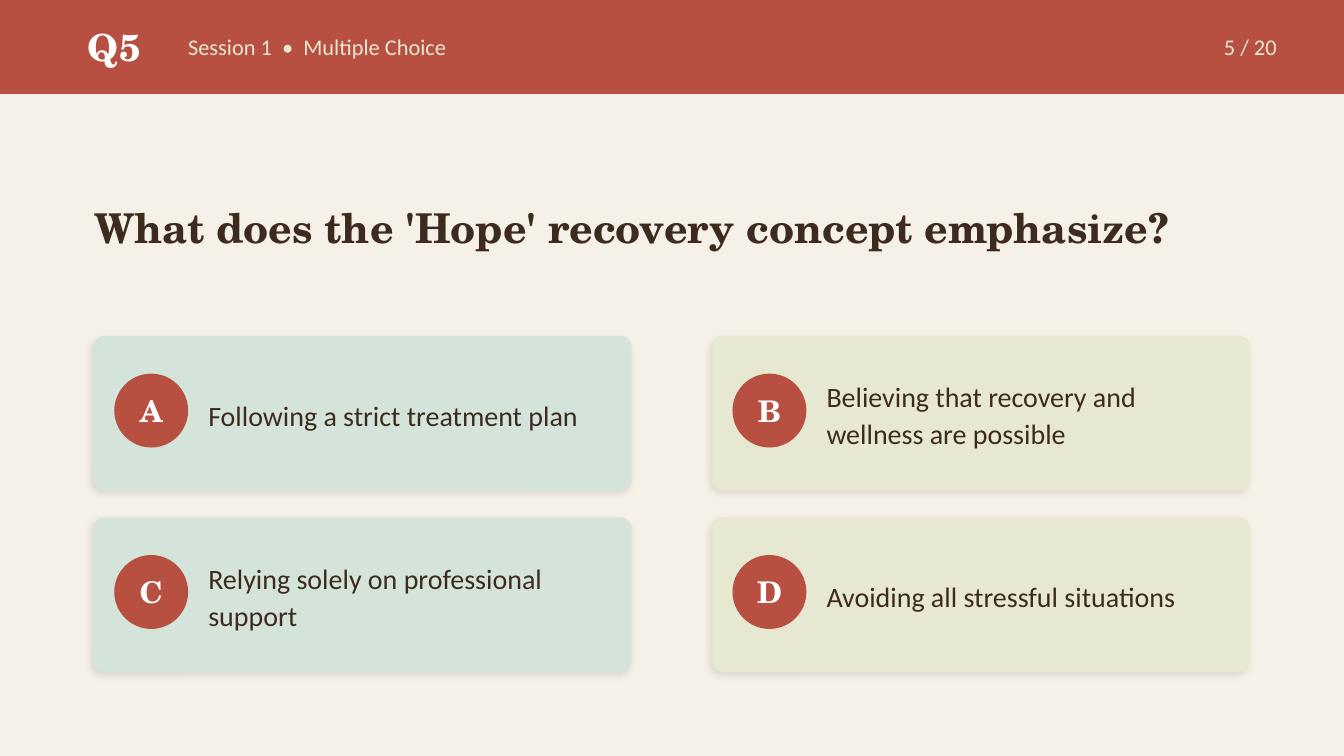
from lxml.etree import SubElement
from pptx import Presentation
from pptx.dml.color import RGBColor
from pptx.enum.shapes import MSO_SHAPE
from pptx.enum.text import MSO_ANCHOR, MSO_AUTO_SIZE, PP_ALIGN
from pptx.oxml.ns import qn
from pptx.util import Pt

SERIF, SANS = "TeX Gyre Schola", "Calibri"
CREAM, RED, BROWN, WHITE = "F5F0E8", "B85042", "3D2B1F", "FFFFFF"
MINT, SAND = "D4E4DA", "E7E8D1"

ANSWERS = [
    "Following a strict treatment plan",
    "Believing that recovery and wellness are possible",
    "Relying solely on professional support",
    "Avoiding all stressful situations",
]


def rgb(value):
    return RGBColor.from_string(value)


def write(sp, text, size=15, font=SANS, color=BROWN, bold=False,
          align=PP_ALIGN.LEFT, spacing=1.0):
    tf = sp.text_frame
    tf.word_wrap = True
    tf.auto_size = MSO_AUTO_SIZE.NONE
    tf.vertical_anchor = MSO_ANCHOR.MIDDLE
    tf.margin_left = tf.margin_top = tf.margin_right = tf.margin_bottom = 0
    p = tf.paragraphs[0]
    p.alignment = align
    p.line_spacing = spacing
    r = p.add_run()
    r.text = text
    r.font.size = Pt(size)
    r.font.name = font
    r.font.bold = bold
    r.font.color.rgb = rgb(color)


def add_text(slide, x, y, w, h, text, **fmt):
    sp = slide.shapes.add_textbox(Pt(x), Pt(y), Pt(w), Pt(h))
    write(sp, text, **fmt)


def add_block(slide, kind, x, y, w, h, fill):
    sp = slide.shapes.add_shape(kind, Pt(x), Pt(y), Pt(w), Pt(h))
    sp.shadow.inherit = False
    sp.fill.solid()
    sp.fill.fore_color.rgb = rgb(fill)
    sp.line.fill.background()
    return sp


def add_soft_shadow(sp):
    effects = sp._element.spPr.find(qn("a:effectLst"))
    shadow = SubElement(effects, qn("a:outerShdw"), blurRad=str(Pt(4)),
                        dist=str(Pt(2)), dir=str(135 * 60000),
                        algn="bl", rotWithShape="0")
    color = SubElement(shadow, qn("a:srgbClr"), val="000000")
    SubElement(color, qn("a:alpha"), val="10000")


def add_header(slide):
    add_block(slide, MSO_SHAPE.RECTANGLE, 0, 0, 720, 50.4, RED)
    y, h = 5.76, 38.88
    add_text(slide, 36, y, 50.4, h, "Q5", size=20, font=SERIF, color=WHITE,
             bold=True, align=PP_ALIGN.CENTER)
    add_text(slide, 100.8, y, 360, h, "Session 1  •  Multiple Choice",
             size=12, color=SAND)
    add_text(slide, 576, y, 108, h, "5 / 20", size=12, color=SAND,
             align=PP_ALIGN.RIGHT)


def add_question(slide, text):
    sp = slide.shapes.title
    sp.left, sp.top, sp.width, sp.height = Pt(50.4), Pt(79.2), Pt(619.2), Pt(79.2)
    write(sp, text, size=22, font=SERIF, bold=True, spacing=1.2)


def add_answer(slide, x, y, letter, text, fill):
    card = add_block(slide, MSO_SHAPE.ROUNDED_RECTANGLE, x, y, 288, 82.8, fill)
    card.adjustments[0] = 0.07
    add_soft_shadow(card)
    badge = add_block(slide, MSO_SHAPE.OVAL, x + 10.8, y + 20.16, 39.6, 39.6, RED)
    write(badge, letter, size=16, font=SERIF, color=WHITE, bold=True,
          align=PP_ALIGN.CENTER)
    add_text(slide, x + 61.2, y + 7.2, 208.8, 68.4, text, spacing=1.1)


def main():
    prs = Presentation()
    prs.slide_width, prs.slide_height = Pt(720), Pt(405)
    slide = prs.slides.add_slide(prs.slide_layouts[5])
    slide.background.fill.solid()
    slide.background.fill.fore_color.rgb = rgb(CREAM)
    add_header(slide)
    add_question(slide, "What does the 'Hope' recovery concept emphasize?")
    for i, (letter, text) in enumerate(zip("ABCD", ANSWERS)):
        row, col = divmod(i, 2)
        add_answer(slide, 50.4 + col * 331.2, 180 + row * 97.2,
                   letter, text, (MINT, SAND)[col])
    prs.save("out.pptx")


if __name__ == "__main__":
    main()
